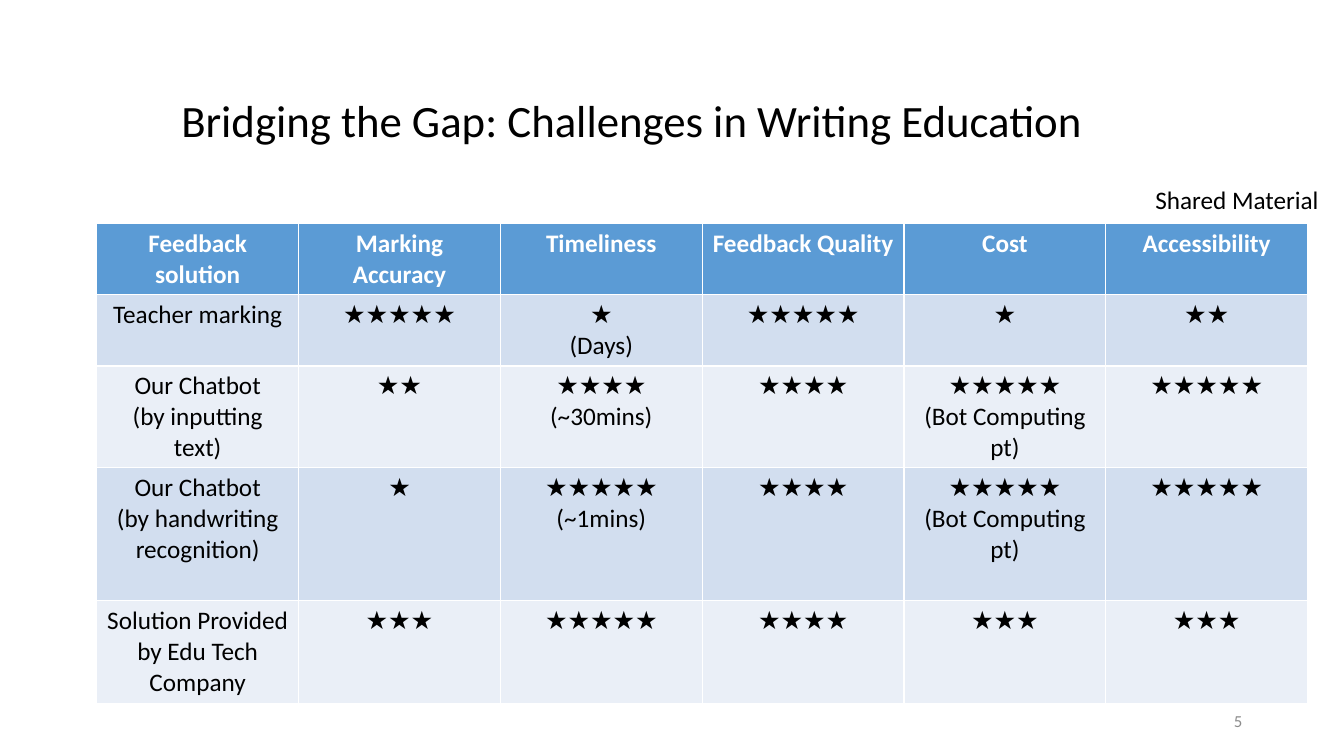
from pptx import Presentation
from pptx.dml.color import RGBColor
from pptx.enum import text
from pptx.util import Inches, Pt

INK = {"black": "000000", "white": "FFFFFF", "gray": "8C8C8C",
       "head": "5B9BD5", "odd": "D2DEEF", "even": "EAEFF7"}
ALIGN, ANCHOR = text.PP_ALIGN, text.MSO_ANCHOR


def style(para, size, ink, align=ALIGN.LEFT, bold=False):
    para.alignment = align
    font = para.font
    font.name, font.size, font.bold = "Calibri", Pt(size), bold
    font.color.rgb = RGBColor.from_string(INK[ink])


def label(slide, words, box, size, ink, align=ALIGN.LEFT, anchor=ANCHOR.MIDDLE):
    """Add a one-paragraph text box and return its text frame."""
    frame = slide.shapes.add_textbox(*map(Inches, box)).text_frame
    frame.word_wrap = True
    frame.vertical_anchor = anchor
    frame.text = words
    style(frame.paragraphs[0], size, ink, align)
    return frame


deck = Presentation()
deck.slide_width, deck.slide_height = Inches(13.33), Inches(7.5)
slide = deck.slides.add_slide(deck.slide_layouts[6])

note = label(slide, "Shared Material", (11.36, 1.78, 2.12, 0.4), 18, "black",
             anchor=ANCHOR.TOP)
note.auto_size = text.MSO_AUTO_SIZE.SHAPE_TO_FIT_TEXT
title = label(slide, "Bridging the Gap: Challenges in Writing Education",
              (1.7, 0.49, 11.5, 1.45), 32, "black")
title.paragraphs[0].line_spacing = 0.9
label(slide, "5", (9.42, 6.95, 3, 0.4), 12, "gray", ALIGN.RIGHT)

heads = ["Feedback solution", "Marking Accuracy", "Timeliness",
         "Feedback Quality", "Cost", "Accessibility"]
# Each solution: name, star counts, and remarks by column
ratings = [
    ("Teacher marking", (5, 1, 5, 1, 2), {2: "(Days)"}),
    ("Our Chatbot\n(by inputting text)", (2, 4, 4, 5, 5),
     {2: "(~30mins)", 4: "(Bot Computing pt)"}),
    ("Our Chatbot\n(by handwriting recognition)", (1, 5, 4, 5, 5),
     {2: "(~1mins)", 4: "(Bot Computing pt)"}),
    ("Solution Provided by Edu Tech Company", (3, 5, 4, 3, 3), {}),
]
rows = [heads]
for name, stars, notes in ratings:
    marks = ["★" * count + ("\n" + notes[col] if col in notes else "")
             for col, count in enumerate(stars, 1)]
    rows.append([name] + marks)

tall = [0.7, 0.71, 1.01, 1.32, 1.02]
table = slide.shapes.add_table(len(rows), len(heads), Inches(0.96), Inches(2.22),
                               Inches(12.01), Inches(sum(tall))).table
for r, row in enumerate(rows):
    table.rows[r].height = Inches(tall[r])
    fill = "head" if r == 0 else "odd" if r % 2 else "even"
    for c, words in enumerate(row):
        cell = table.cell(r, c)
        cell.text = words
        cell.fill.solid()
        cell.fill.fore_color.rgb = RGBColor.from_string(INK[fill])
        for para in cell.text_frame.paragraphs:
            style(para, 18, "black" if r else "white", ALIGN.CENTER, r == 0)

deck.save("out.pptx")
